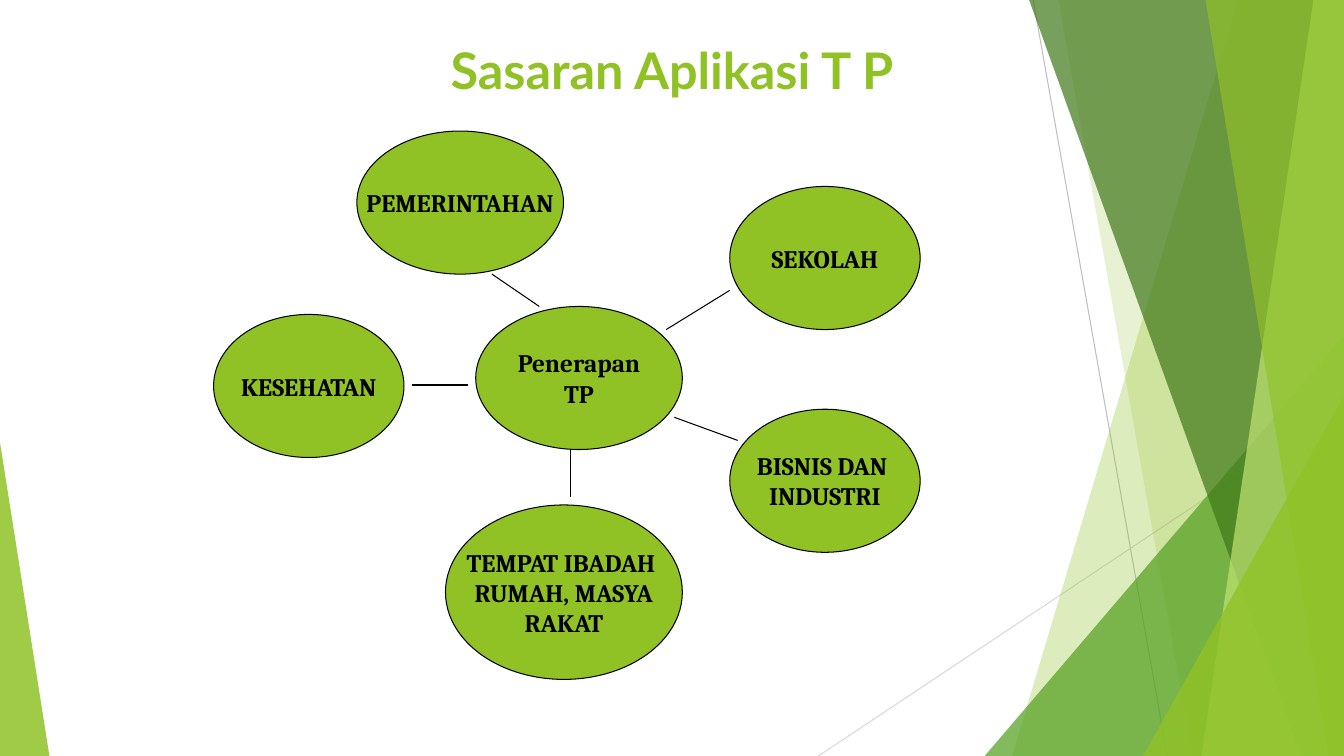
import lxml.etree
import pptx
import pptx.dml.color
import pptx.enum.shapes
import pptx.enum.text
import pptx.oxml.ns
import pptx.util

Pt = pptx.util.Pt
qn = pptx.oxml.ns.qn
SHAPES = pptx.enum.shapes.MSO_SHAPE
ANCHOR = pptx.enum.text.MSO_ANCHOR
CENTER = pptx.enum.text.PP_ALIGN.CENTER
WIDTH, HEIGHT = 960, 540
COLORS = {
    "lime": "90C226", "green": "54A021", "forest": "3F7819", "pale": "C0E474",
    "black": "000000", "gray": "BFBFBF", "light_gray": "D9D9D9",
}


def rgb(name):
    return pptx.dml.color.RGBColor.from_string(COLORS[name])


def add_line(start, end, color):
    line = slide.shapes.add_connector(
        pptx.enum.shapes.MSO_CONNECTOR.STRAIGHT, *map(Pt, start + end))
    line.line.color.rgb = rgb(color)
    line.line.width = Pt(0.75)
    lxml.etree.SubElement(line.element.spPr, qn("a:effectLst"))


presentation = pptx.Presentation()
presentation.slide_width = Pt(WIDTH)
presentation.slide_height = Pt(HEIGHT)
slide = presentation.slides.add_slide(presentation.slide_layouts[5])

# Background lines and translucent facets
add_line((738, 0), (833.8, HEIGHT), "gray")
add_line((WIDTH, 290.2), (584.6, HEIGHT), "light_gray")

# A band lists its left edge's top and bottom x; a triangle lists
# left, top, width and the position of its apex.
facets = [
    ((884.2, 723), "lime", 30),
    ((756, 851.8), "lime", 20),
    ((703.4, 239.8, 256.6, 1), "green", 72),
    ((735.1, 929.5), "forest", 70),
    ((938.2, 858.2), "pale", 70),
    ((861.1, 949), "lime", 65),
    ((816.5, 283, 143.5, 1), "lime", 80),
    ((0, 316, 35.3, 0), "lime", 85),
]
for geometry, color, opacity in facets:
    if len(geometry) == 2:
        top_x, bottom_x = geometry
        builder = slide.shapes.build_freeform(Pt(top_x), 0)
        corners = [(WIDTH, 0), (WIDTH, HEIGHT), (bottom_x, HEIGHT)]
        builder.add_line_segments([(Pt(x), Pt(y)) for x, y in corners])
        facet = builder.convert_to_shape()
    else:
        left, top, width, apex = geometry
        facet = slide.shapes.add_shape(
            SHAPES.ISOSCELES_TRIANGLE, Pt(left), Pt(top), Pt(width), Pt(HEIGHT - top))
        facet.adjustments[0] = apex
    facet.shadow.inherit = False
    facet.line.fill.background()
    facet.fill.solid()
    facet.fill.fore_color.rgb = rgb(color)
    fill_color = facet.element.spPr.find(".//" + qn("a:srgbClr"))
    lxml.etree.SubElement(fill_color, qn("a:alpha"), val=str(opacity * 1000))

# Title, in front of the facets
title = slide.shapes.title
slide.shapes[-1].element.addnext(title.element)
title.left, title.top, title.width, title.height = Pt(156), Pt(24.5), Pt(648), Pt(90)
title.text_frame.text = "Sasaran Aplikasi T P"
title.text_frame.vertical_anchor = ANCHOR.TOP
title.text_frame.auto_size = pptx.enum.text.MSO_AUTO_SIZE.NONE
paragraph = title.text_frame.paragraphs[0]
paragraph.alignment = CENTER
paragraph.font.name = "Lato"
paragraph.font.size = Pt(36)
paragraph.font.bold = True
paragraph.font.color.rgb = rgb("lime")

# Application areas around the central topic
bubbles = [
    ("KESEHATAN", 152.6, 224.6, 136, 102.2),
    ("BISNIS DAN \nINDUSTRI", 521.3, 292.3, 136, 102.2),
    ("SEKOLAH", 521.3, 133.2, 136, 102.2),
    ("Penerapan\nTP", 339.8, 218.9, 147.6, 102.2),
    ("TEMPAT IBADAH \nRUMAH, MASYA\nRAKAT", 318.2, 360.7, 169.2, 124.6),
    ("PEMERINTAHAN", 254.9, 93.6, 147.6, 102.2),
]
for text, *box in bubbles:
    bubble = slide.shapes.add_shape(SHAPES.OVAL, *map(Pt, box))
    bubble.shadow.inherit = False
    bubble.fill.solid()
    bubble.fill.fore_color.rgb = rgb("lime")
    bubble.line.color.rgb = rgb("black")
    bubble.line.width = Pt(0.75)
    frame = bubble.text_frame
    frame.word_wrap = False
    frame.vertical_anchor = ANCHOR.MIDDLE
    frame.text = text
    for paragraph in frame.paragraphs:
        paragraph.alignment = CENTER
        paragraph.font.name = "Cambria"
        paragraph.font.size = Pt(18)
        paragraph.font.bold = True
        paragraph.font.color.rgb = rgb("black")

spokes = [
    ((334.1, 275), (294.5, 275)),
    ((521.3, 207.4), (475.9, 235.4)),
    ((527, 314.6), (481.7, 298.1)),
    ((385.2, 218.9), (351.4, 195.8)),
    ((407.5, 320.4), (407.5, 355)),
]
for start, end in spokes:
    add_line(start, end, "black")

presentation.save("out.pptx")
